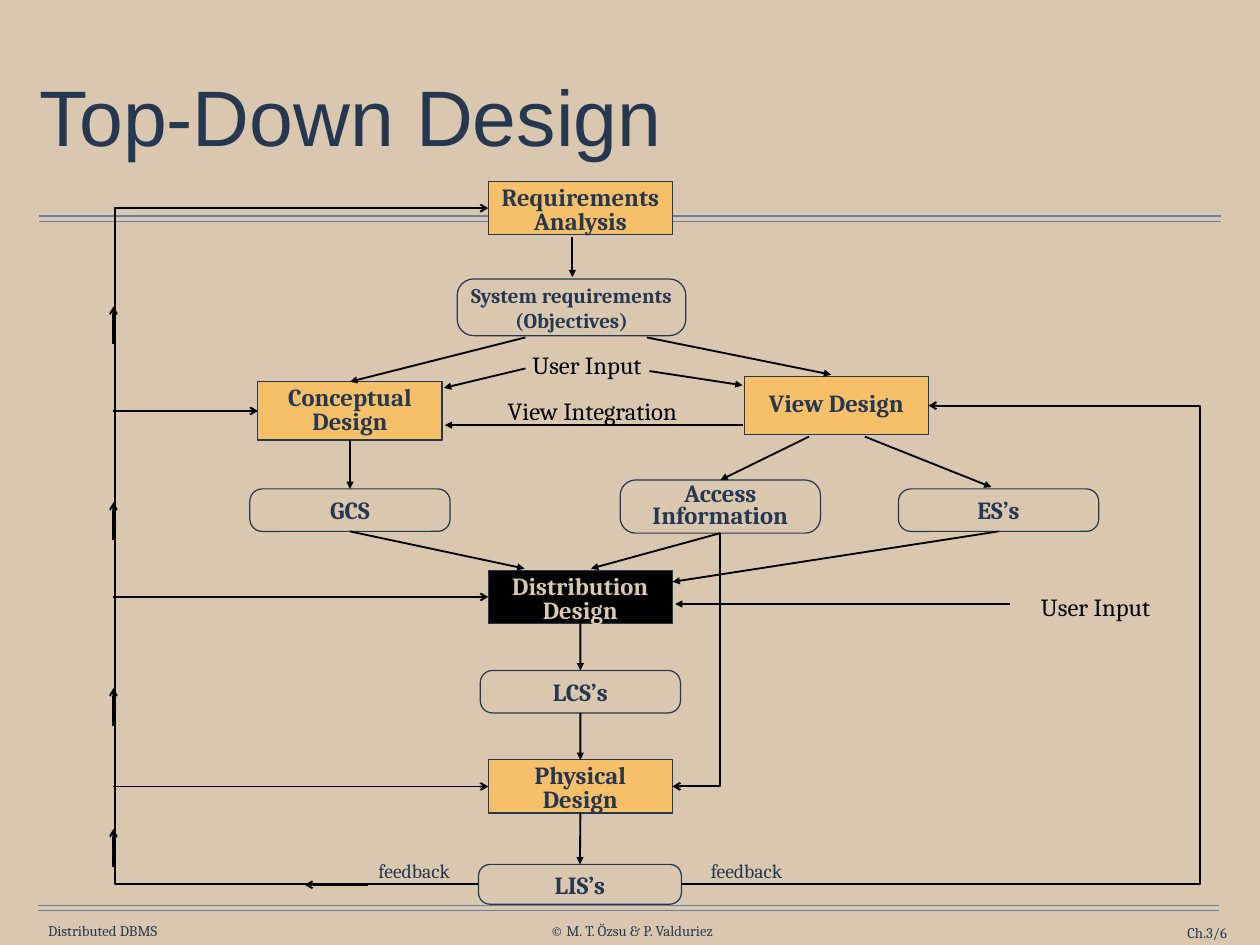
from lxml import etree
from pptx import Presentation
from pptx import util as u
from pptx.dml.color import RGBColor
from pptx.enum import shapes, text
from pptx.oxml.ns import qn

SAND = RGBColor(0xD9, 0xC8, 0xAF)
NAVY = RGBColor(0x26, 0x37, 0x50)
BLUE = RGBColor(0x66, 0x82, 0xAA)
GOLD = RGBColor(0xF6, 0xBF, 0x69)
BLACK = RGBColor(0, 0, 0)
SERIF = "Cambria"
TOP, LEFT, BOTTOM, RIGHT = range(4)
MID, CENTER = text.MSO_ANCHOR.MIDDLE, text.PP_ALIGN.CENTER
RECT, ROUND = shapes.MSO_SHAPE.RECTANGLE, shapes.MSO_SHAPE.ROUNDED_RECTANGLE

# Name: text, left, top, width, height, fill, size, line spacing, anchored middle
STEPS = {
    "req": ("Requirements\nAnalysis", 4.24, 0, 2.08, 0.6, GOLD, 20, 0.8, False),
    "sys": ("System requirements\n(Objectives)", 3.89, 1.1, 2.58, 0.64, None, 17, 1, True),
    "con": ("Conceptual\nDesign", 1.64, 2.26, 2.08, 0.66, GOLD, 20, 0.8, False),
    "view": ("View Design", 7.13, 2.2, 2.08, 0.66, GOLD, 20, 0.8, True),
    "acc": ("Access\nInformation", 5.73, 3.37, 2.26, 0.6, None, 20, 0.75, True),
    "es": ("ES’s", 8.87, 3.47, 2.26, 0.48, None, 20, 1, True),
    "gcs": ("GCS", 1.55, 3.47, 2.26, 0.48, None, 20, 1, True),
    "dist": ("Distribution\nDesign", 4.24, 4.39, 2.08, 0.6, BLACK, 20, 0.8, False),
    "phys": ("Physical\nDesign", 4.24, 6.53, 2.08, 0.6, GOLD, 20, 0.8, False),
    "lcs": ("LCS’s", 4.15, 5.52, 2.26, 0.48, None, 20, 1, True),
    "lis": ("LIS’s", 4.13, 7.71, 2.29, 0.45, None, 20, 1, True),
}
# Text, left, top, width, height, size, colour, side inset, top inset
LABELS = [
    ("User Input", 4.54, 1.83, 1.63, 0.48, 20, BLACK, 0.14, 0.07),
    ("View Integration", 4.23, 2.35, 2.37, 0.48, 20, BLACK, 0.14, 0.07),
    ("User Input", 10.28, 4.56, 1.63, 0.48, 20, BLACK, 0.14, 0.07),
    ("feedback", 2.85, 7.6, 1.11, 0.37, 16, NAVY, 0.1, 0.05),
    ("feedback", 6.6, 7.6, 1.11, 0.37, 16, NAVY, 0.1, 0.05),
]
# Each end is a point or a step with its side
FLOWS = [
    (("phys", BOTTOM), ("lis", TOP)),
    (("lcs", BOTTOM), ("phys", TOP)),
    (("dist", BOTTOM), ("lcs", TOP)),
    (("acc", BOTTOM), (5.4, 4.37)),
    (("es", BOTTOM), (6.32, 4.52)),
    (("gcs", BOTTOM), (4.65, 4.37)),
    ((4.66, 1.76), ("con", TOP)),
    ((6.03, 1.76), (8.11, 2.18)),
    (("con", BOTTOM), ("gcs", TOP)),
    ((7.86, 2.88), ("acc", TOP)),
    ((8.49, 2.88), (9.92, 3.45)),
    ((7.11, 2.75), (3.75, 2.75)),
    ((4.66, 2.11), (3.74, 2.33)),
    ((6.06, 2.14), (7.11, 2.3)),
    ((10.13, 4.77), (6.35, 4.77)),
    ((5.19, 0.63), (5.19, 1.08)),
]
BACK = [
    ((0, 6.83), ("phys", LEFT)),
    ((0, 4.69), ("dist", LEFT)),
    ((0, 2.59), ("con", LEFT)),
    ((2.88, 7.94), (2.17, 7.94)),
] + [((0.01, y), (0.01, y - 0.43)) for y in (7.74, 6.15, 4.05, 1.84)]


def inches(*sizes):
    return [u.Inches(s) for s in sizes]


def write(shape, words, size, color, font=SERIF, bold=False, align=CENTER,
          gap=1, anchor=MID, inset=(0, 0), wrap=False):
    frame = shape.text_frame
    frame.text = words
    frame.word_wrap = wrap
    frame.vertical_anchor = anchor
    frame.margin_left = frame.margin_right = u.Inches(inset[0])
    frame.margin_top = frame.margin_bottom = u.Inches(inset[1])
    for para in frame.paragraphs:
        para.alignment = align
        para.line_spacing = gap
        for run in para.runs:
            run.font.name, run.font.size, run.font.bold = font, u.Pt(size), bold
            run.font.color.rgb = color


def draw(slide, start, end, color=BLACK, width=1.5, kind=shapes.MSO_CONNECTOR.STRAIGHT):
    line = slide.shapes.add_connector(kind, *inches(*start, *end))
    line.line.color.rgb = color
    line.line.width = u.Pt(width)
    etree.SubElement(line._element.spPr, qn("a:effectLst"))
    return line


def point(line, style, end="tailEnd"):
    etree.SubElement(line.line._get_or_add_ln(), qn("a:" + end), type=style)


def rule(slide, left, top, width):
    for y in (top, top + 0.06):
        draw(slide, (left, y), (left + width, y), BLUE, 1)


def header(slide, box):
    x, y, w, h = box
    rule(slide, x + 0.05, y + 1.95, 13.34)
    title = slide.shapes.add_textbox(*inches(x, y, w, h))
    write(title, "Top-Down Design", 64, NAVY, "Arial", align=text.PP_ALIGN.LEFT,
          gap=0.9, inset=(0.06, 0.06), wrap=True)


def footer(slide, box):
    x, y, w, h = box
    rule(slide, x, y, w)
    notes = [("Distributed DBMS", 0.04, 0.19, 1.38, CENTER),
             ("© M. T. Özsu & P. Valduriez", 5.66, 0.19, 2.08, CENTER),
             ("Ch.3/6", 11.88, 0.21, 1.54, text.PP_ALIGN.RIGHT)]
    for words, dx, dy, width, align in notes:
        note = slide.shapes.add_textbox(*inches(x + dx, y + dy, width, 0.2))
        write(note, words, 12, NAVY, align=align)


def flow(slide, box):
    x, y, w, h = box
    nodes = {}

    # Labels
    for words, dx, dy, wide, high, size, color, *inset in LABELS:
        label = slide.shapes.add_textbox(*inches(x + dx, y + dy, wide, high))
        write(label, words, size, color, anchor=text.MSO_ANCHOR.TOP, inset=inset)

    # Design steps and their results
    for name, (words, dx, dy, wide, high, fill, size, gap, mid) in STEPS.items():
        node = slide.shapes.add_shape(RECT if fill is not None else ROUND,
                                      *inches(x + dx, y + dy, wide, high))
        node.shadow.inherit = False
        node.line.color.rgb = NAVY
        node.line.width = u.Pt(1)
        if fill is None:
            node.fill.background()
            node.adjustments[0] = 0.29
        else:
            node.fill.solid()
            node.fill.fore_color.rgb = fill
        write(node, words, size, SAND if fill == BLACK else NAVY, bold=True, gap=gap,
              anchor=MID if mid else text.MSO_ANCHOR.TOP,
              inset=(0.14, 0 if name == "acc" else 0.07))
        nodes[name] = node

    def spot(end):
        return (x, y) if end[0] in nodes else (x + end[0], y + end[1])

    def link(start, end, **style):
        line = draw(slide, spot(start), spot(end), **style)
        if start[0] in nodes:
            line.begin_connect(nodes[start[0]], start[1])
        if end[0] in nodes:
            line.end_connect(nodes[end[0]], end[1])
        return line

    def bend(start, end, via):
        line = link(start, end, kind=shapes.MSO_CONNECTOR.ELBOW)
        part = (u.Inches(x + via) - line.begin_x) / (line.end_x - line.begin_x)
        guides = line._element.spPr.find(qn("a:prstGeom")).get_or_add_avLst()
        etree.SubElement(guides, qn("a:gd"), name="adj1", fmla=f"val {round(part * 100000)}")
        return line

    # Straight arrows
    for pairs, style in ((FLOWS, "triangle"), (BACK, "arrow")):
        for start, end in pairs:
            point(link(start, end), style)

    # Feedback loops and the way from access information
    point(bend(("lis", LEFT), ("req", LEFT), 0.02), "arrow")
    point(bend(("lis", RIGHT), ("view", RIGHT), w), "arrow")
    point(bend((6.32, 6.83), (6.86, 3.97), 6.86), "arrow", "headEnd")


def main():
    deck = Presentation()
    deck.slide_width, deck.slide_height = inches(14.22, 10.67)
    slide = deck.slides.add_slide(deck.slide_layouts[6])
    slide.background.fill.solid()
    slide.background.fill.fore_color.rgb = SAND
    header(slide, (0.39, 0.49, 13.44, 1.76))
    footer(slide, (0.43, 10.22, 13.33, 0.45))
    flow(slide, (1.27, 2.05, 12.27, 8.16))
    deck.save("out.pptx")


if __name__ == "__main__":
    main()
